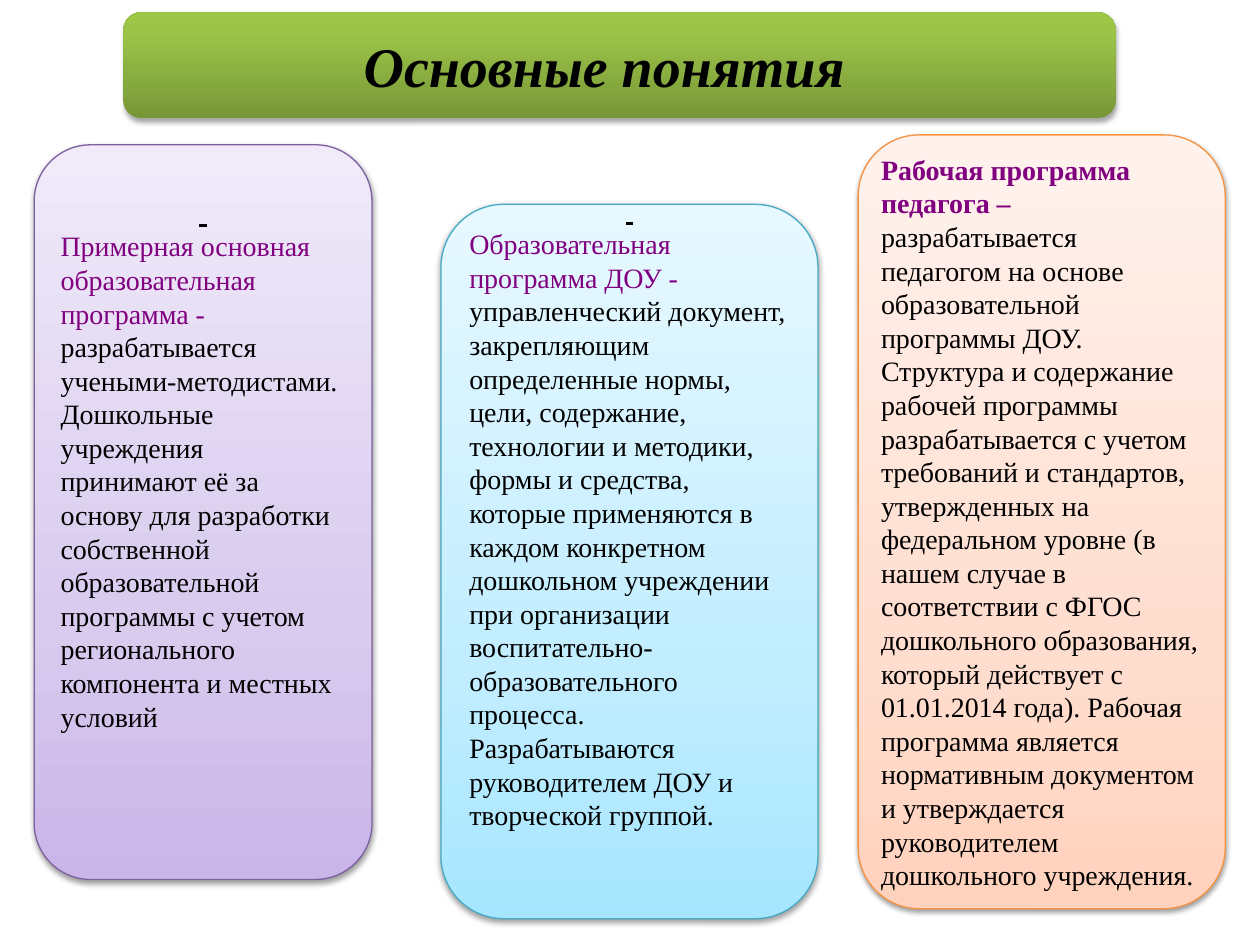
from dataclasses import dataclass

from lxml import etree
from pptx import Presentation
from pptx import util as u
from pptx.dml.color import RGBColor
from pptx.enum import shapes, text
from pptx.oxml.ns import qn


@dataclass(frozen=True)
class Theme:
    serif: str = "Times New Roman"
    sans: str = "Calibri"
    black: str = "000000"
    term: str = "800080"
    title: int = 32
    body: int = 16
    # Gradient stops (percent, colour) run from bottom to top
    green: tuple = ((0, "779737"), (80, "9BC348"), (100, "9DC746"))
    violet: tuple = ((0, "C9B5E8"), (35, "D8CBEE"), (100, "F0EAF9"))
    blue: tuple = ((0, "A7E6FF"), (35, "C1EDFF"), (100, "E7F8FF"))
    peach: tuple = ((0, "FFD2BD"), (35, "FFDED0"), (100, "FFF2ED"))


T = Theme()

# Each card: place, stops, line, side inset, bottom inset, mark size, term, bold, text
CARDS = (
    ((0.69, 2.92, 6.81, 14.81), T.violet, "7D60A0", 0.2, 2.24, 20,
     "Примерная основная образовательная программа -", False,
     " разрабатывается учеными-методистами. Дошкольные учреждения принимают "
     "её за основу для разработки собственной образовательной программы с "
     "учетом регионального компонента и местных условий"),
    ((8.89, 4.12, 7.6, 14.4), T.blue, "46AAC5", 0.2, 2.24, 19,
     "Образовательная программа ДОУ -", False,
     " управленческий документ, закрепляющим определенные нормы, цели, "
     "содержание, технологии и методики, формы и средства, которые "
     "применяются в каждом конкретном дошкольном учреждении при организации "
     "воспитательно-образовательного процесса. Разрабатываются руководителем "
     "ДОУ и творческой группой."),
    ((17.3, 2.72, 7.4, 15.6), T.peach, "F69240", 0.1, 0.13, None,
     "Рабочая программа педагога –", True,
     " разрабатывается педагогом на основе образовательной программы ДОУ. "
     "Структура и содержание рабочей программы разрабатывается с учетом "
     "требований и стандартов, утвержденных на федеральном уровне (в нашем "
     "случае в соответствии с ФГОС дошкольного образования, который действует "
     "с 01.01.2014 года). Рабочая программа является нормативным документом и "
     "утверждается руководителем дошкольного учреждения."),
)


def shade(shape, stops):
    shape.fill.gradient()
    shape.fill.gradient_angle = 90
    group = shape._element.spPr.find(".//" + qn("a:gsLst"))
    for old in list(group):
        group.remove(old)
    for place, tint in stops:
        stop = etree.SubElement(group, qn("a:gs"), pos=str(place * 1000))
        etree.SubElement(stop, qn("a:srgbClr"), val=tint)


def drop(shape, dist, alpha):
    """Cast a soft shadow straight down."""
    shape.shadow.inherit = False
    group = shape._element.spPr.find(qn("a:effectLst"))
    cast = etree.SubElement(
        group, qn("a:outerShdw"), blurRad=str(u.Pt(3.1)), dist=str(u.Pt(dist)),
        dir="5400000", rotWithShape="0")
    tint = etree.SubElement(cast, qn("a:srgbClr"), val=T.black)
    etree.SubElement(tint, qn("a:alpha"), val=str(alpha * 1000))


def panel(slide, place, stops, line, dist, alpha, sides):
    """Draw a rounded panel and return its text frame."""
    shape = slide.shapes.add_shape(
        shapes.MSO_SHAPE.ROUNDED_RECTANGLE, *map(u.Cm, place))
    shade(shape, stops)
    if line:
        shape.line.color.rgb = RGBColor.from_string(line)
        shape.line.width = u.Pt(0.75)
    else:
        shape.line.fill.background()
    drop(shape, dist, alpha)
    frame = shape.text_frame
    frame.word_wrap = True
    frame.vertical_anchor = text.MSO_ANCHOR.MIDDLE
    (frame.margin_left, frame.margin_top,
     frame.margin_right, frame.margin_bottom) = map(u.Cm, sides)
    return frame


def add_run(par, words, size, tint=T.black, face=T.serif, **style):
    run = par.add_run()
    run.text = words
    font = run.font
    font.size, font.name = u.Pt(size), face
    font.color.rgb = RGBColor.from_string(tint)
    for key, value in style.items():
        setattr(font, key, value)


def add_title(slide):
    frame = panel(slide, (2.49, 0.25, 20, 2.13), T.green, None, 1.8, 35,
                  (0.25, 0.13, 0.86, 0.13))
    par = frame.paragraphs[0]
    par.alignment = text.PP_ALIGN.CENTER
    add_run(par, "Основные понятия", T.title, bold=True, italic=True)


def add_card(slide, place, stops, line, side, base, mark, term, bold, words):
    frame = panel(slide, place, stops, line, 1.6, 38, (side, 0.13, side, base))
    par = frame.paragraphs[0]
    if mark:
        # Short underlined mark above the term
        par.alignment = text.PP_ALIGN.CENTER
        add_run(par, " ", mark, face=T.sans, bold=True, underline=True)
        par = frame.add_paragraph()
    par.alignment = text.PP_ALIGN.LEFT
    add_run(par, term, T.body, T.term, bold=bold)
    add_run(par, words, T.body, bold=False)


def main():
    deck = Presentation()
    deck.slide_width, deck.slide_height = u.Cm(25.4), u.Cm(19.05)
    slide = deck.slides.add_slide(deck.slide_layouts[6])
    add_title(slide)
    for card in CARDS:
        add_card(slide, *card)
    deck.save("out.pptx")


if __name__ == "__main__":
    main()
